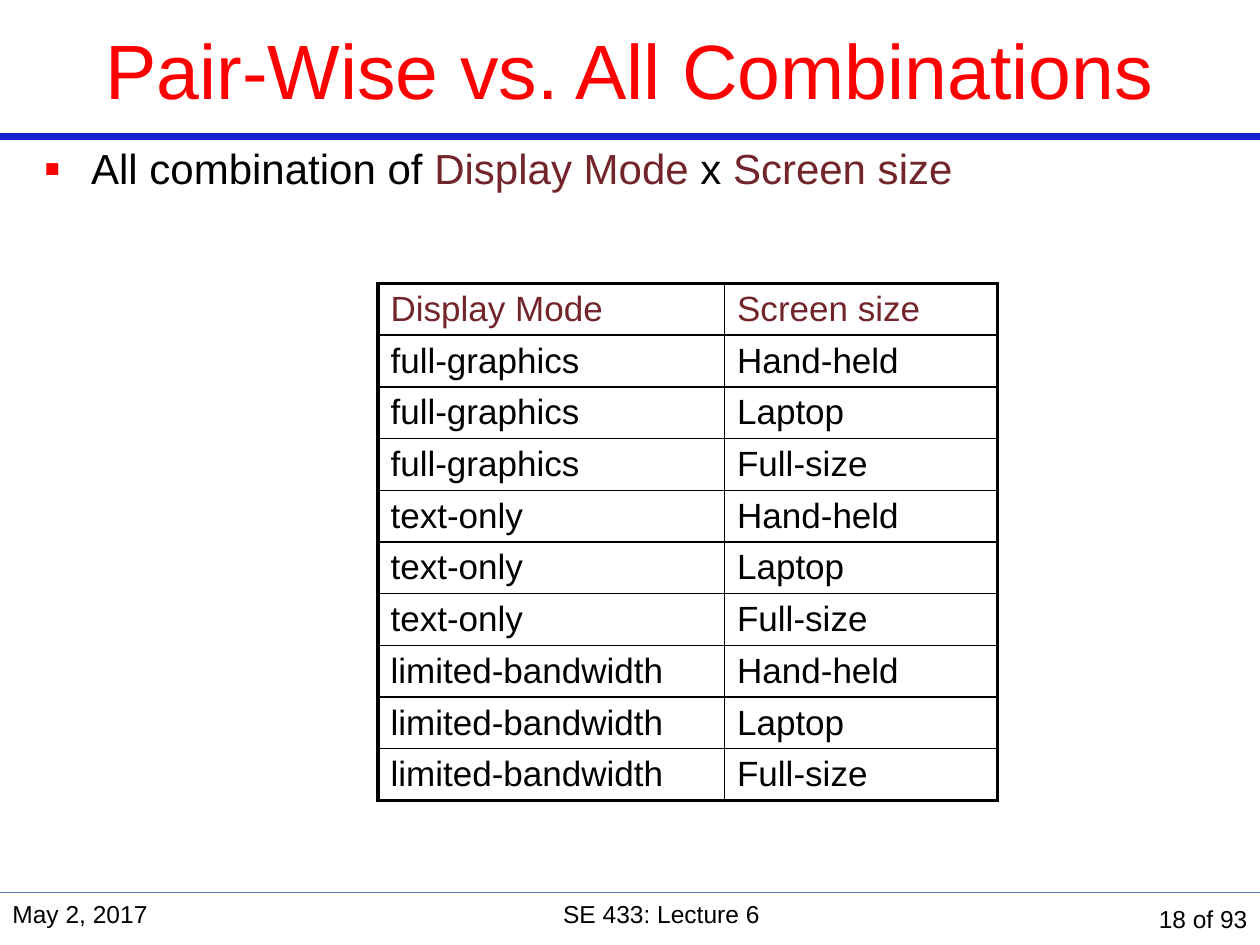
from dataclasses import dataclass
from itertools import product

from lxml import etree
from pptx import Presentation
from pptx.dml.color import RGBColor
from pptx.enum import shapes, text
from pptx.oxml import ns
from pptx.util import Pt


@dataclass(frozen=True)
class Theme:
    font: str = "Arial"
    title: str = "FF0000"
    ink: str = "000000"
    term: str = "72252B"
    title_rule: str = "1822CD"
    footer_rule: str = "4F81BD"
    title_size: int = 44
    body_size: int = 24
    table_size: int = 20
    footer_size: int = 14
    thick: float = 2.25
    thin: float = 1


THEME = Theme()
WIDTH, HEIGHT = 720, 540
HEADER_BOTTOM, FOOTER_TOP = 78, 510
MODES = ["full-graphics", "text-only", "limited-bandwidth"]
SCREENS = ["Hand-held", "Laptop", "Full-size"]


def apply(target, values):
    for name, value in values.items():
        setattr(target, name, value)


def add_xml(parent, tag, **attributes):
    return etree.SubElement(parent, ns.qn(tag), attributes)


def write(paragraph, parts, size, align=text.PP_ALIGN.LEFT):
    """Fill a paragraph with (wording, colour) parts."""
    paragraph.alignment = align
    for wording, color in parts:
        run = paragraph.add_run()
        run.text = wording
        apply(run.font, {"name": THEME.font, "size": Pt(size), "bold": False})
        run.font.color.rgb = RGBColor.from_string(color)


def set_frame(shape, box, anchor=text.MSO_ANCHOR.TOP):
    apply(shape, dict(zip(("left", "top", "width", "height"), map(Pt, box))))
    apply(shape.text_frame, {"word_wrap": True, "vertical_anchor": anchor,
                             "auto_size": text.MSO_AUTO_SIZE.NONE})
    return shape.text_frame.paragraphs[0]


def add_text(slide, box, parts, size, **layout):
    align = layout.pop("align", text.PP_ALIGN.LEFT)
    shape = slide.shapes.add_textbox(0, 0, 0, 0)
    paragraph = set_frame(shape, box, **layout)
    write(paragraph, parts, size, align)
    return paragraph


def add_title(slide, wording):
    paragraph = set_frame(slide.shapes.title, (0, 0, WIDTH, HEADER_BOTTOM),
                          text.MSO_ANCHOR.MIDDLE)
    write(paragraph, [(wording, THEME.title)], THEME.title_size,
          text.PP_ALIGN.CENTER)


def add_rule(slide, top, color, weight):
    rule = slide.shapes.add_connector(
        shapes.MSO_CONNECTOR.STRAIGHT, 0, Pt(top), Pt(WIDTH), Pt(top))
    rule.line.color.rgb = RGBColor.from_string(color)
    rule.line.width = Pt(weight)
    add_xml(rule.line._get_or_add_ln().getparent(), "a:effectLst")


def add_bullet(paragraph, symbol, indent):
    properties = paragraph._p.get_or_add_pPr()
    properties.set("marL", str(Pt(indent)))
    properties.set("indent", str(-Pt(indent)))
    color = add_xml(properties, "a:buClr")
    add_xml(color, "a:srgbClr", val=THEME.title)
    add_xml(properties, "a:buSzPct", val="114000")
    add_xml(properties, "a:buFont", typeface=THEME.font)
    add_xml(properties, "a:buChar", char=symbol)


def set_borders(cell, outer_sides):
    """Draw thick lines on the table's outer sides and thin ones inside."""
    properties = cell._tc.get_or_add_tcPr()
    for position, side in enumerate("LRTB"):
        weight = THEME.thick if side in outer_sides else THEME.thin
        line = etree.Element(ns.qn(f"a:ln{side}"), w=str(Pt(weight)))
        fill = add_xml(line, "a:solidFill")
        add_xml(fill, "a:srgbClr", val=THEME.ink)
        properties.insert(position, line)


def add_grid(slide, rows, left, top, widths, row_height):
    last_row, last_column = len(rows) - 1, len(widths) - 1
    grid = slide.shapes.add_table(
        len(rows), len(widths), Pt(left), Pt(top),
        Pt(sum(widths)), Pt(row_height * len(rows))).table
    apply(grid, {"first_row": False, "horz_banding": False})
    for column, width in zip(grid.columns, widths):
        column.width = Pt(width)
    for r, row in enumerate(rows):
        grid.rows[r].height = Pt(row_height)
        for c, wording in enumerate(row):
            cell = grid.cell(r, c)
            cell.fill.background()
            color = THEME.ink if r else THEME.term
            write(cell.text_frame.paragraphs[0], [(wording, color)],
                  THEME.table_size)
            edges = {"L": c == 0, "R": c == last_column,
                     "T": r == 0, "B": r == last_row}
            set_borders(cell, [side for side, outer in edges.items() if outer])


def add_footer(slide):
    align, anchor = text.PP_ALIGN, text.MSO_ANCHOR
    items = [
        ("May 2, 2017", 0, 156, align.LEFT, anchor.TOP),
        ("SE 433: Lecture 6", 156, 444, align.CENTER, anchor.TOP),
        ("18 of 93", 600, 120, align.RIGHT, anchor.MIDDLE),
    ]
    for wording, left, width, side, level in items:
        add_text(slide, (left, FOOTER_TOP, width, HEIGHT - FOOTER_TOP),
                 [(wording, THEME.ink)], THEME.footer_size,
                 align=side, anchor=level)


def main():
    deck = Presentation()
    apply(deck, {"slide_width": Pt(WIDTH), "slide_height": Pt(HEIGHT)})
    slide = deck.slides.add_slide(deck.slide_layouts.get_by_name("Title Only"))

    # Rules and heading
    add_rule(slide, HEADER_BOTTOM, THEME.title_rule, 4.5)
    add_rule(slide, FOOTER_TOP, THEME.footer_rule, 0.75)
    add_title(slide, "Pair-Wise vs. All Combinations")

    # Statement
    statement = add_text(slide, (18, HEADER_BOTTOM, 684, 432), [
        ("All combination of ", THEME.ink), ("Display Mode ", THEME.term),
        ("x ", THEME.ink), ("Screen size", THEME.term)], THEME.body_size)
    add_bullet(statement, "▪", 27)

    # Every pairing of mode and screen
    rows = [("Display Mode", "Screen size"), *product(MODES, SCREENS)]
    add_grid(slide, rows, left=216, top=162, widths=(198, 156), row_height=29.5)

    # Footer
    add_footer(slide)
    deck.save("out.pptx")


if __name__ == "__main__":
    main()
